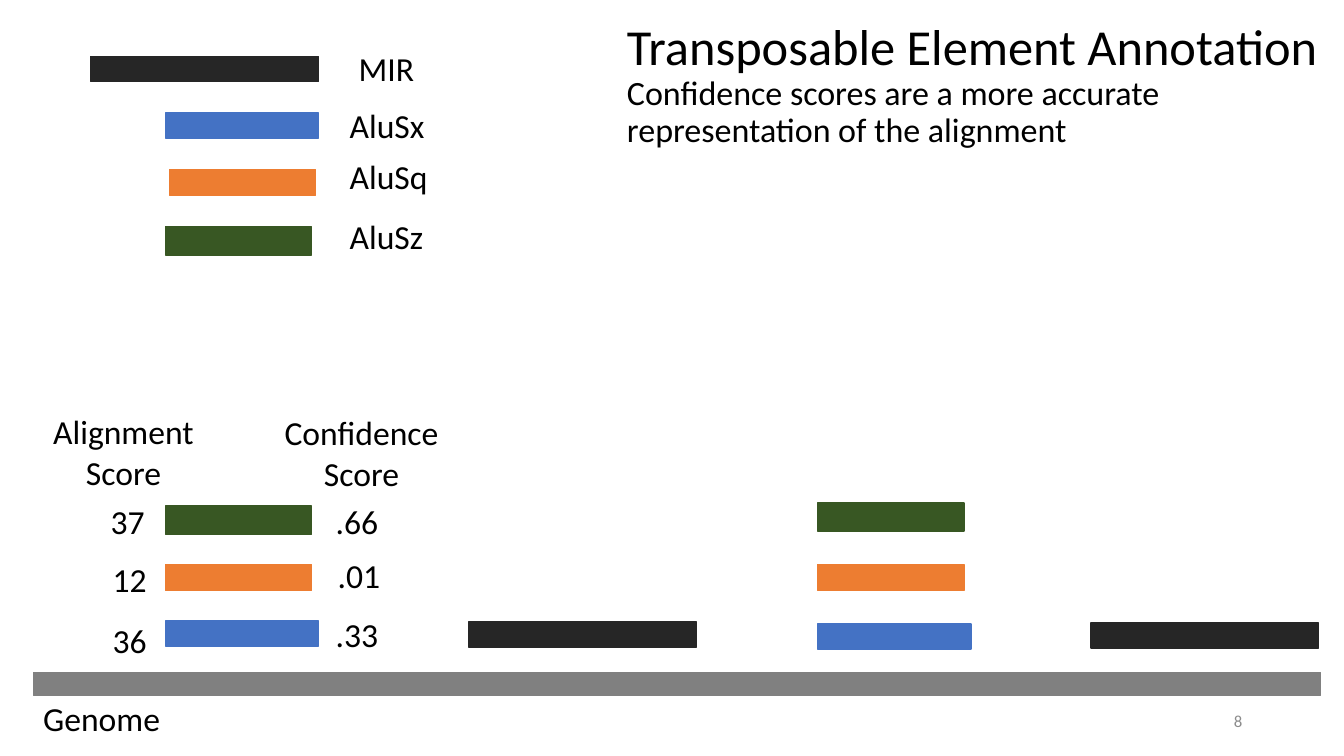
import pptx
import pptx.util
import pptx.dml.color
import pptx.enum.shapes
import pptx.enum.text
from dataclasses import dataclass

PX = 9144  # 100 px to the inch
ALIGN = pptx.enum.text.PP_ALIGN
ANCHOR = pptx.enum.text.MSO_ANCHOR
AUTO_SIZE = pptx.enum.text.MSO_AUTO_SIZE


@dataclass(frozen=True)
class Theme:
    font: str = "Calibri"
    text: str = "000000"
    muted: str = "8C8C8C"
    genome: str = "808080"
    title: float = 36
    subtitle: float = 24.3
    body: float = 24
    number: float = 12


THEME = Theme()

# Repeat element: colour, width, height
ELEMENTS = {
    "MIR": ("262626", 226, 25),
    "AluSx": ("4472C4", 152, 25),
    "AluSq": ("ED7D31", 145, 26),
    "AluSz": ("385723", 145, 28),
}


def px(*lengths):
    return [pptx.util.Emu(n * PX) for n in lengths]


def rgb(value):
    return pptx.dml.color.RGBColor.from_string(value)


def style(font, size, color=THEME.text):
    font.name = THEME.font
    font.size = pptx.util.Pt(size)
    font.color.rgb = rgb(color)


def add_bar(s, x, y, w, h, color):
    sp = s.shapes.add_shape(pptx.enum.shapes.MSO_SHAPE.RECTANGLE, *px(x, y, w, h))
    sp.shadow.inherit = False
    sp.fill.solid()
    sp.fill.fore_color.rgb = rgb(color)
    sp.line.color.rgb = rgb(color)
    sp.line.width = pptx.util.Pt(1)


def add_element(s, name, x, y):
    color, w, h = ELEMENTS[name]
    add_bar(s, x, y, w, h, color)


def add_label(s, text, x, y, w, h=50, wrap=False, align=ALIGN.LEFT):
    tf = s.shapes.add_textbox(*px(x, y, w, h)).text_frame
    tf.word_wrap = wrap
    tf.auto_size = AUTO_SIZE.SHAPE_TO_FIT_TEXT
    p = tf.paragraphs[0]
    p.text = text
    p.alignment = align
    style(p.font, THEME.body)


def add_title(s, x, y, w, h):
    tf = s.shapes.add_textbox(*px(x, y, w, h)).text_frame
    tf.word_wrap = True
    tf.vertical_anchor = ANCHOR.MIDDLE
    tf.margin_bottom = px(60)[0]  # lifts the text above the box centre
    p = tf.paragraphs[0]
    p.line_spacing = 0.9
    r = p.add_run()
    r.text = "Transposable Element Annotation"
    style(r.font, THEME.title)
    p.add_line_break()
    r = p.add_run()
    r.text = "Confidence scores are a more accurate representation of the alignment"
    style(r.font, THEME.subtitle)


def add_legend(s, x, y):
    # name, bar offset, label offset and label width
    rows = [
        ("MIR", 0, 0, 256, -13, 76),
        ("AluSx", 74, 56, 247, 43, 95),
        ("AluSq", 78, 112, 247, 94, 98),
        ("AluSz", 74, 169, 247, 153, 94),
    ]
    for name, bar_x, bar_y, label_x, label_y, label_w in rows:
        add_element(s, name, x + bar_x, y + bar_y)
        add_label(s, name, x + label_x, y + label_y, label_w)


def add_scores(s, x, y):
    add_label(s, "Alignment Score", x, y, 177, 91, True, ALIGN.CENTER)
    add_label(s, "Confidence Score", x + 235, y + 1, 179, 91, True, ALIGN.CENTER)
    # name, bar top, then text, left and top of both scores
    rows = [
        ("AluSz", 99, "37", 66, 89, ".66", 289, 89),
        ("AluSq", 157, "12", 68, 147, ".01", 291, 143),
        ("AluSx", 213, "36", 68, 207, ".33", 289, 201),
    ]
    for name, bar_y, score, score_x, score_y, conf, conf_x, conf_y in rows:
        add_element(s, name, x + 130, y + bar_y)
        add_label(s, score, x + score_x, y + score_y, 54)
        add_label(s, conf, x + conf_x, y + conf_y, 63)


def add_genome(s, x, y, w):
    add_bar(s, x, y, w, 23, THEME.genome)
    add_label(s, "Genome", x, y + 20, 137)
    # Elements above the genome: offset from its left end and top
    hits = [
        ("MIR", 432, -50),
        ("AluSx", 778, -48),
        ("AluSq", 778, -107),
        ("AluSz", 778, -168),
        ("MIR", 1049, -49),
    ]
    for name, dx, dy in hits:
        add_element(s, name, x + dx, y + dy)


def add_slide_number(s, x, y, w, h):
    tf = s.shapes.add_textbox(*px(x, y, w, h)).text_frame
    tf.word_wrap = True
    tf.vertical_anchor = ANCHOR.MIDDLE
    p = tf.paragraphs[0]
    p.text = "8"
    p.alignment = ALIGN.RIGHT
    style(p.font, THEME.number, THEME.muted)


def main():
    prs = pptx.Presentation()
    prs.slide_width, prs.slide_height = px(1333, 750)
    s = prs.slides.add_slide(prs.slide_layouts[6])
    add_title(s, 612, 44, 721, 137)
    add_legend(s, 90, 56)
    add_scores(s, 34, 403)
    add_genome(s, 33, 667, 1277)
    add_slide_number(s, 942, 695, 300, 40)
    prs.save("out.pptx")


if __name__ == "__main__":
    main()
